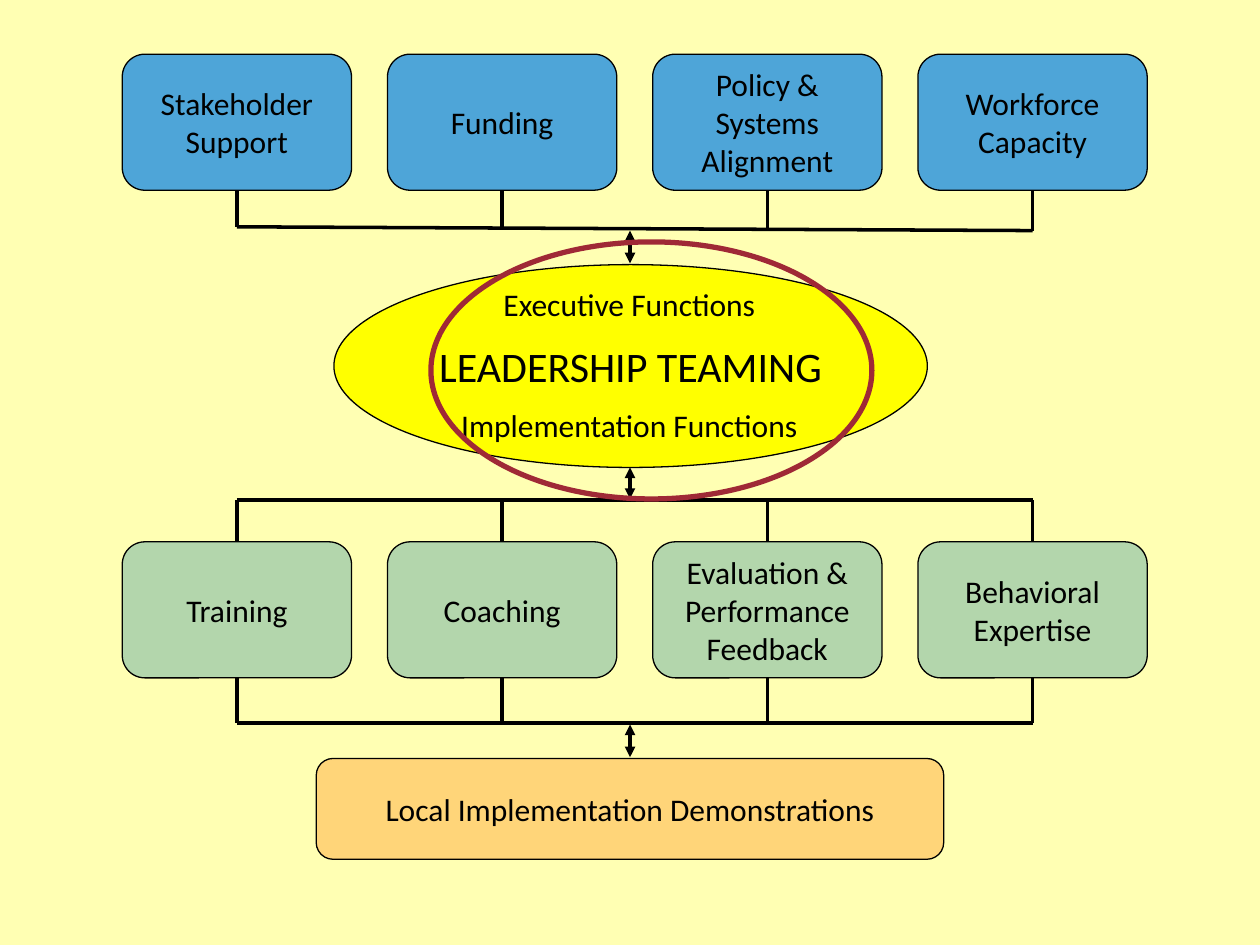
from lxml import etree
from pptx import Presentation
from pptx.dml.color import RGBColor
from pptx.enum.shapes import MSO_CONNECTOR, MSO_SHAPE
from pptx.enum.text import MSO_ANCHOR, PP_ALIGN
from pptx.oxml.ns import qn
from pptx.util import Inches, Pt

ROUNDED = MSO_SHAPE.ROUNDED_RECTANGLE
OVAL = MSO_SHAPE.OVAL
STRAIGHT = MSO_CONNECTOR.STRAIGHT
MIDDLE = MSO_ANCHOR.MIDDLE
CENTER = PP_ALIGN.CENTER

THEME = {
    "font": "Calibri",
    "body": 18,
    "title": 24,
    "background": "FFFFB3",
    "ink": "000000",
    "support": "4EA5D8",
    "team": "FFFF00",
    "driver": "B3D6AC",
    "local": "FFD579",
    "highlight": "9F2936",
}


def add_node(text, left, top, width, height, *, shape=ROUNDED, fill=None,
             line="ink", line_width=0.75, size="body"):
    """Add a shape with centred text; fill, line and size are THEME keys."""
    sp = s.shapes.add_shape(shape, Inches(left), Inches(top), Inches(width), Inches(height))
    sp.shadow.inherit = False
    if fill:
        sp.fill.solid()
        sp.fill.fore_color.rgb = RGBColor.from_string(THEME[fill])
    else:
        sp.fill.background()
    if line:
        sp.line.color.rgb = RGBColor.from_string(THEME[line])
        sp.line.width = Pt(line_width)
    else:
        sp.line.fill.background()
    if text:
        tf = sp.text_frame
        tf.word_wrap = True
        tf.vertical_anchor = MIDDLE
        p = tf.paragraphs[0]
        p.alignment = CENTER
        r = p.add_run()
        r.text = text
        r.font.name = THEME["font"]
        r.font.size = Pt(THEME[size])
        r.font.color.rgb = RGBColor.from_string(THEME["ink"])


def add_line(x1, y1, x2, y2, *, arrows=False):
    cxn = s.shapes.add_connector(STRAIGHT, Inches(x1), Inches(y1), Inches(x2), Inches(y2))
    cxn.line.color.rgb = RGBColor.from_string(THEME["ink"])
    cxn.line.width = Pt(2)
    if arrows:
        ln = cxn.line._get_or_add_ln()
        for end in ("a:headEnd", "a:tailEnd"):
            etree.SubElement(ln, qn(end), type="triangle")
    etree.SubElement(cxn._element.spPr, qn("a:effectLst"))


prs = Presentation()
prs.slide_width, prs.slide_height = Inches(10), Inches(7.5)
s = prs.slides.add_slide(prs.slide_layouts[6])
s.background.fill.solid()
s.background.fill.fore_color.rgb = RGBColor.from_string(THEME["background"])

# Two rows of four boxes on a shared column grid
FIRST_LEFT, PITCH, BOX_W = 0.97, 2.105, 1.82
SUPPORT_TOP, DRIVER_TOP, BOX_H = 0.43, 4.3, 1.08
supports = ["Stakeholder Support", "Funding", "Policy & Systems Alignment", "Workforce Capacity"]
drivers = ["Training", "Coaching", "Evaluation & Performance Feedback", "Behavioral Expertise"]
for labels, top, fill in ((supports, SUPPORT_TOP, "support"), (drivers, DRIVER_TOP, "driver")):
    for i, label in enumerate(labels):
        add_node(label, FIRST_LEFT + i * PITCH, top, BOX_W, BOX_H, fill=fill)

add_node("LEADERSHIP TEAMING", 2.65, 2.1, 4.71, 1.61, shape=OVAL, fill="team", size="title")
add_node("Local Implementation Demonstrations", 2.51, 6.02, 4.98, 0.8, fill="local")

# Each bus joins the box edges of one row: (box edge, left bar y, right bar y)
centers = [FIRST_LEFT + BOX_W / 2 + i * PITCH for i in range(4)]
buses = [
    (SUPPORT_TOP + BOX_H, 1.8, 1.83),
    (DRIVER_TOP, 3.97, 3.97),
    (DRIVER_TOP + BOX_H, 5.74, 5.74),
]
for edge, left_y, right_y in buses:
    add_line(centers[0], left_y, centers[-1], right_y)
    for i, x in enumerate(centers):
        add_line(x, edge, x, left_y + (right_y - left_y) * i / 3)

# Two-way arrows between the tiers
for start, end in ((1.83, 2.09), (3.71, 3.96), (5.75, 6.01)):
    add_line(5, start, 5, end, arrows=True)

for label, top in (("Executive Functions", 2.08), ("Implementation Functions", 3.04)):
    add_node(label, 2.92, top, 4.15, 0.67, shape=OVAL, line=None)
add_node("", 3.42, 1.92, 3.5, 2.04, shape=OVAL, line="highlight", line_width=3)

prs.save("out.pptx")
